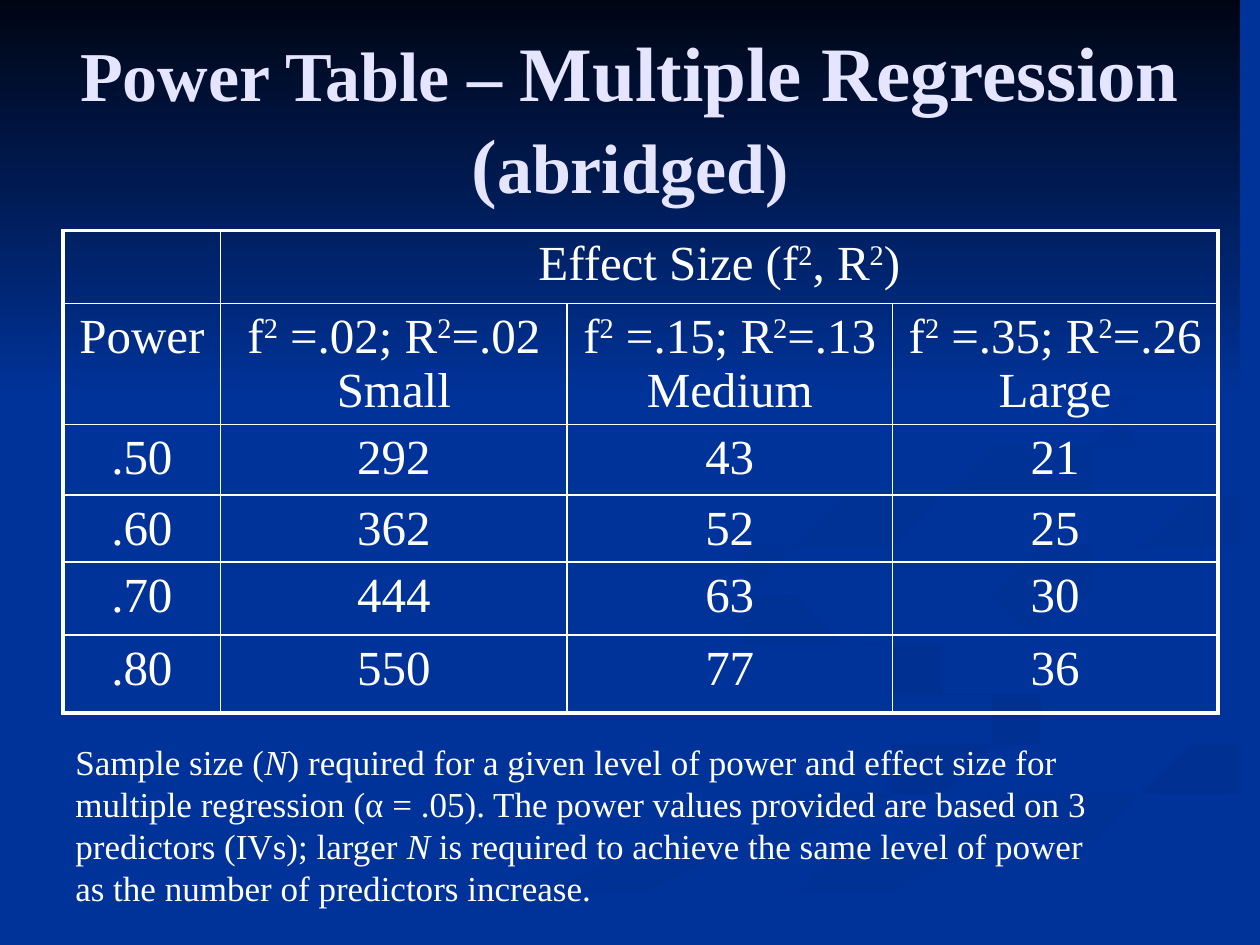
from lxml.etree import SubElement
from pptx import Presentation
from pptx.dml.color import RGBColor as Rgb
from pptx.enum.text import MSO_ANCHOR as Anchor, PP_ALIGN as Align
from pptx.oxml.ns import qn
from pptx.util import Cm, Pt

THEME = {
    "font": "Times New Roman", "text": "FFFFFF", "title": "E5E5FF",
    "back": "003399", "night": "000514", "shade": "003091",
    "title_size": 40, "title_large": 44, "table_size": 28, "note_size": 20,
    "outer_line": 2.25, "inner_line": 1,
}
PAGE_WIDTH, PAGE_HEIGHT, MARGIN = 25.4, 19.05, 1.27

# Content: ^ encloses superscripts, * encloses italics
TITLE = [("Power Table – ", "title_size"), ("Multiple Regression (", "title_large"),
         ("abridged)", "title_size")]
ROWS = [
    ["", "Effect Size (f^2^, R^2^)", "", ""],
    ["Power", "f^2^ =.02; R^2^=.02 Small", "f^2^ =.15; R^2^=.13 Medium",
     "f^2^ =.35; R^2^=.26 Large"],
    [".50", "292", "43", "21"],
    [".60", "362", "52", "25"],
    [".70", "444", "63", "30"],
    [".80", "550", "77", "36"],
]
NOTE = ("Sample size (*N*) required for a given level of power and effect size for "
        "multiple regression (α = .05). The power values provided are based on 3 "
        "predictors (IVs); larger *N* is required to achieve the same level of power "
        "as the number of predictors increase.")
COLUMN_WIDTHS = [3.18, 6.98, 6.56, 6.56]
ROW_HEIGHTS = [1.47, 2.44, 1.42, 1.35, 1.47, 1.57]

# Background ribbons: first colour, last colour, angle, knots of the outline in cm
RIBBONS = [
    ("back", "shade", 0, [(14.6, 11.7), (15.6, 12.7), (19.8, 14.1), (18.5, 15.3),
                          (7.6, 19), (9.2, 19), (19.8, 15.4), (19.8, 14)]),
    ("shade", "back", 90, [(12.8, 19), (14.5, 19), (25.4, 15.5), (25.4, 14.8),
                           (17.7, 17)]),
    ("back", "back", 0, [(18.4, 11.8), (23.8, 14.1), (22.6, 15.4), (12.1, 19),
                         (17.7, 17), (25.4, 14.8), (25.4, 13.7), (19.9, 11.7),
                         (25.4, 10.2), (25.4, 9.8)]),
    ("shade", "back", 45, [(19.8, 11.7), (21, 12.6), (20.6, 11.8), (25.4, 10.7),
                           (25.4, 10.2)]),
    ("shade", "back", 45, [(19.4, 5.9), (22.6, 8.5), (15.6, 10.8), (15.8, 12.7),
                           (15.8, 11.3), (22.5, 9.4)]),
]


def style_span(span, size, color=THEME["text"]):
    span.font.name = THEME["font"]
    span.font.size = Pt(size)
    span.font.color.rgb = Rgb.from_string(color)


def write_marked(para, text, mark, size):
    """Write text whose marked pieces are superscript (^) or italic (*)."""
    for index, piece in enumerate(text.split(mark)):
        if not piece:
            continue
        span = para.add_run()
        span.text = piece
        style_span(span, size)
        if index % 2 and mark == "^":
            span._r.get_or_add_rPr().set("baseline", "30000")
        elif index % 2:
            span.font.italic = True


def add_box(page, top, width, height):
    frame = page.shapes.add_textbox(Cm(MARGIN), Cm(top), Cm(width), Cm(height)).text_frame
    frame.word_wrap = True
    return frame


def fill_gradient(shape, first, last, angle):
    shape.shadow.inherit = False
    shape.line.fill.background()
    shape.fill.gradient()
    shape.fill.gradient_angle = -angle % 360
    for position, name in enumerate((first, last)):
        stop = shape.fill.gradient_stops[position]
        stop.color.rgb = Rgb.from_string(THEME[name])
        stop.position = position


def smooth(knots, steps=8):
    """Closed Catmull-Rom curve through the knots, kept on the page."""
    def blend(a, b, c, d, t):
        return b + t / 2 * (c - a + t * (2 * a - 5 * b + 4 * c - d
                                         + t * (3 * (b - c) + d - a)))

    limits = (PAGE_WIDTH, PAGE_HEIGHT)
    count = len(knots)
    for start in range(count):
        near = [knots[(start + shift) % count] for shift in (-1, 0, 1, 2)]
        for step in range(steps):
            yield tuple(min(blend(*values, step / steps), limit)
                        for values, limit in zip(zip(*near), limits))


def add_ribbon(page, first, last, angle, knots):
    points = list(smooth(knots))
    builder = page.shapes.build_freeform(*points[0], scale=Cm(1))
    builder.add_line_segments(points[1:], close=True)
    fill_gradient(builder.convert_to_shape(), first, last, angle)


def set_borders(cell, outer_sides):
    properties = cell._tc.get_or_add_tcPr()
    for side in "LRTB":
        width = THEME["outer_line" if outer_sides[side] else "inner_line"]
        line = SubElement(properties, qn(f"a:ln{side}"), w=str(Pt(width)))
        fill = SubElement(line, qn("a:solidFill"))
        SubElement(fill, qn("a:srgbClr"), val=THEME["text"])


def add_power_table(page):
    frame = page.shapes.add_table(len(ROWS), len(COLUMN_WIDTHS), Cm(MARGIN), Cm(4.65),
                                  Cm(sum(COLUMN_WIDTHS)), Cm(sum(ROW_HEIGHTS)))
    table = frame.table
    table.first_row = table.horz_banding = False
    for column, width in zip(table.columns, COLUMN_WIDTHS):
        column.width = Cm(width)
    for row, height in zip(table.rows, ROW_HEIGHTS):
        row.height = Cm(height)
    table.cell(0, 1).merge(table.cell(0, 3))

    for r, texts in enumerate(ROWS):
        for c, text in enumerate(texts):
            cell = table.cell(r, c)
            if cell.is_spanned:
                continue
            span_width = cell.span_width if cell.is_merge_origin else 1
            set_borders(cell, {"L": c == 0, "R": c + span_width == len(texts),
                               "T": r == 0, "B": r == len(ROWS) - 1})
            cell.fill.background()
            para = cell.text_frame.paragraphs[0]
            para.alignment = Align.CENTER
            write_marked(para, text, "^", THEME["table_size"])


def main():
    deck = Presentation()
    deck.slide_width, deck.slide_height = Cm(PAGE_WIDTH), Cm(PAGE_HEIGHT)
    page = deck.slides.add_slide(deck.slide_layouts[6])

    # Background
    page.background.fill.solid()
    page.background.fill.fore_color.rgb = Rgb.from_string(THEME["back"])
    for ribbon in RIBBONS:
        add_ribbon(page, *ribbon)
    builder = page.shapes.build_freeform(0, 0, scale=Cm(1))
    builder.add_line_segments([(0, 7.82), (PAGE_WIDTH, 7.82), (PAGE_WIDTH, 0)], close=True)
    fill_gradient(builder.convert_to_shape(), "night", "back", 90)

    # Table and note
    add_power_table(page)
    note = add_box(page, 14.81, 21.16, 3.63)
    write_marked(note.paragraphs[0], NOTE, "*", THEME["note_size"])

    # Title
    title = add_box(page, 0.76, PAGE_WIDTH - 2 * MARGIN, 3.18)
    title.vertical_anchor = Anchor.MIDDLE
    para = title.paragraphs[0]
    para.alignment = Align.CENTER
    for text, size in TITLE:
        span = para.add_run()
        span.text = text
        style_span(span, THEME[size], THEME["title"])
        span.font.bold = True

    deck.save("out.pptx")


if __name__ == "__main__":
    main()
